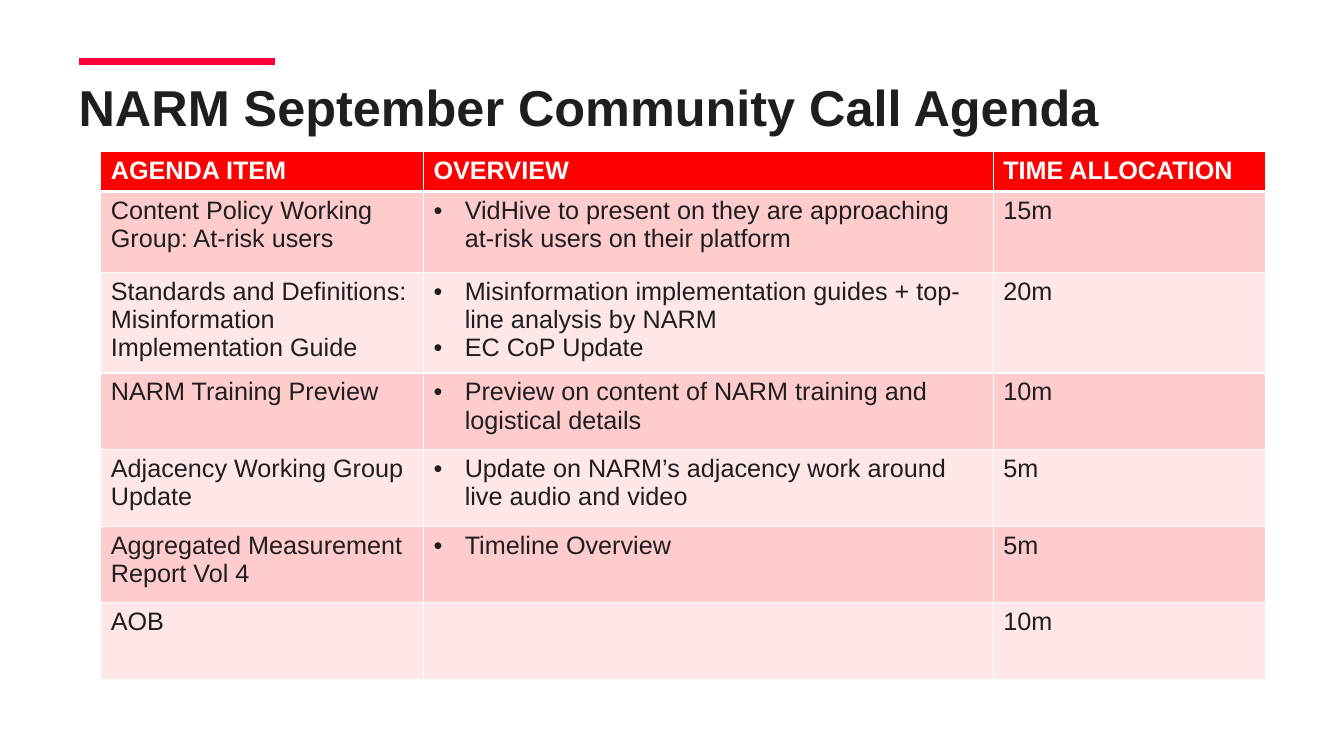
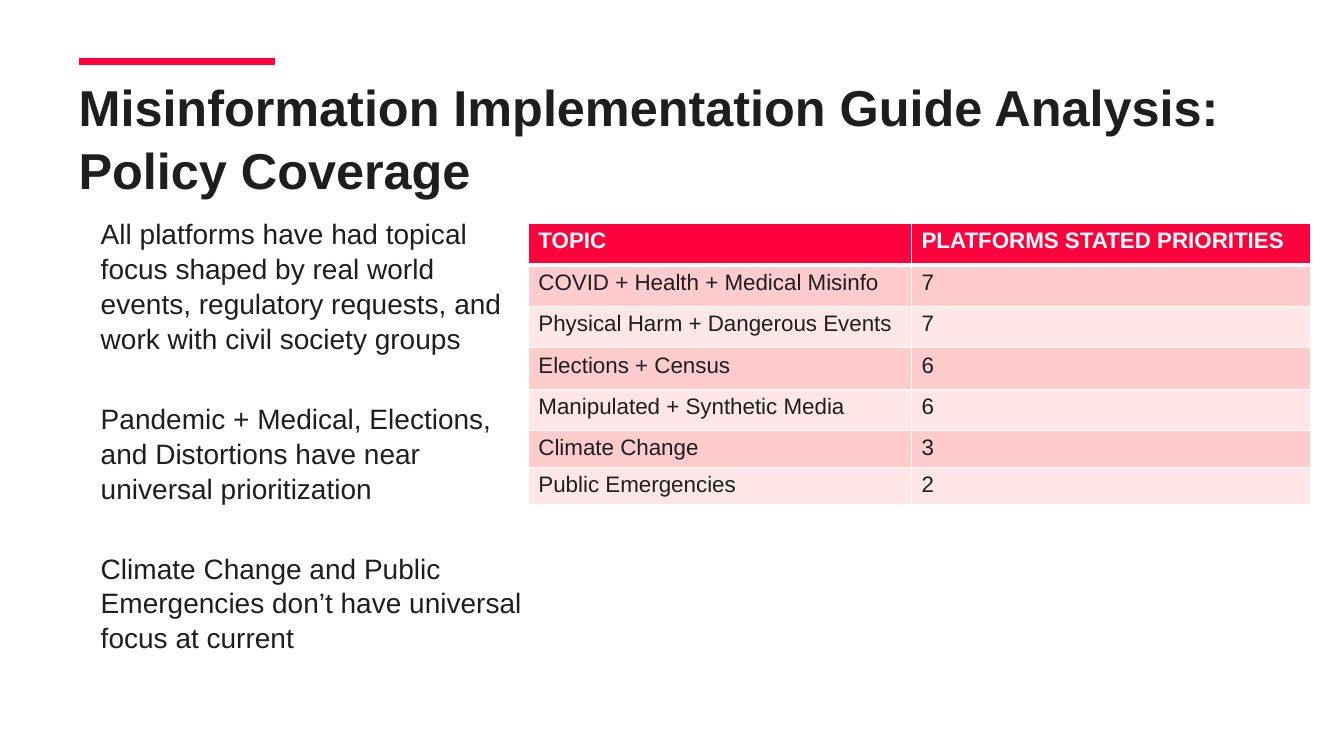
from dataclasses import dataclass

from pptx import Presentation
from pptx.dml.color import RGBColor
from pptx.enum.shapes import MSO_CONNECTOR
from pptx.oxml.ns import qn
from pptx.util import Inches, Length, Pt
from lxml.etree import SubElement

HUES = {"ink": "1E1E1E", "white": "FFFFFF", "brand": "FF003C", "red": "FF0000",
        "rose": "FFCCCE", "blush": "FFE7E8"}
WIDE, TALL = Inches(13.33), Inches(7.5)
LEFT, TOP = 5.85, 8.13
INSET = 7.5
BULLET = Inches(0.31)


@dataclass
class Grid:
    """A table: place, columns and rows in percent of the slide."""
    left: float
    top: float
    cols: list[float]
    rows: list[float]
    head: str
    size: int
    cells: list[tuple]


@dataclass
class Page:
    """One slide: its title, its table and any side notes."""
    title: str
    grid: Grid
    notes: tuple[str, ...] = ()


PAGES = [
    Page("NARM September Community Call Agenda", Grid(
        INSET, 20, [24.01, 42.39, 20.26], [4.93, 10.67, 12.67] + [10.13] * 4, "red", 18, [
            ("AGENDA ITEM", "OVERVIEW", "TIME ALLOCATION"),
            ("Content Policy Working Group: At-risk users",
             ["VidHive to present on they are approaching at-risk users on their platform"], "15m"),
            ("Standards and Definitions: Misinformation Implementation Guide",
             ["Misinformation implementation guides + top-line analysis by NARM",
              "EC CoP Update"], "20m"),
            ("NARM Training Preview",
             ["Preview on content of NARM training and logistical details"], "10m"),
            ("Adjacency Working Group Update",
             ["Update on NARM’s adjacency work around live audio and video"], "5m"),
            ("Aggregated Measurement Report Vol 4", ["Timeline Overview"], "5m"),
            ("AOB", "", "10m"),
        ])),
    Page("Misinformation Implementation Guide Analysis: Policy Coverage", Grid(
        39.31, 29.6, [28.51, 29.71], [5.47] * 5 + [4.67] * 2, "brand", 16, [
            ("TOPIC", "PLATFORMS STATED PRIORITIES"),
            ("COVID + Health + Medical Misinfo", "7"),
            ("Physical Harm + Dangerous Events", "7"),
            ("Elections + Census", "6"),
            ("Manipulated + Synthetic Media", "6"),
            ("Climate Change", "3"),
            ("Public Emergencies", "2"),
        ]), (
        "All platforms have had topical focus shaped by real world events, "
        "regulatory requests, and work with civil society groups",
        "Pandemic + Medical, Elections, and Distortions have near universal prioritization",
        "Climate Change and Public Emergencies don’t have universal focus at current",
    )),
]


def wide(part: float) -> Length:
    """Turn a percentage of the slide's width into a length."""
    return Length(round(WIDE * part / 100))


def tall(part: float) -> Length:
    """Turn a percentage of the slide's height into a length."""
    return Length(round(TALL * part / 100))


def tint(name: str) -> RGBColor:
    """Look up a named colour."""
    return RGBColor.from_string(HUES[name])


def style(para, size: float, hue: str = "ink", bold: bool = False) -> None:
    """Apply the font format to a paragraph."""
    for key, value in {"name": "Arial", "size": Pt(size), "bold": bold}.items():
        setattr(para.font, key, value)
    para.font.color.rgb = tint(hue)


def write(slide, box: tuple, texts: tuple[str, ...], size: float,
          bold: bool = False, gap: float = 0, inset: float = 0) -> None:
    """Add a text box with one paragraph per text."""
    left, top, width, height = box
    frame = slide.shapes.add_textbox(wide(left), tall(top), wide(width), tall(height)).text_frame
    form = {"word_wrap": True, "margin_left": 0, "margin_top": Inches(inset),
            "margin_right": 0, "margin_bottom": 0}
    for key, value in form.items():
        setattr(frame, key, value)
    for spot, text in enumerate(texts):
        para = frame.add_paragraph() if spot else frame.paragraphs[0]
        para.text = text
        para.line_spacing = 1.04
        if spot:
            para.space_before = Pt(gap)
        style(para, size, bold=bold)


def rule(slide) -> None:
    """Draw the accent line above the title."""
    line = slide.shapes.add_connector(
        MSO_CONNECTOR.STRAIGHT, wide(LEFT), tall(TOP), wide(20.48), tall(TOP))
    line.line.color.rgb = tint("brand")
    line.line.width = Pt(5)
    SubElement(line._element.spPr, qn("a:effectLst"))


def edge(cell, row: int) -> None:
    """Draw white cell borders, thick below the header."""
    props = cell._tc.get_or_add_tcPr()
    thick = {0: "B", 1: "T"}.get(row)
    for side in "LRTB":
        width = Pt(3 if side == thick else 1)
        line = SubElement(props, qn(f"a:ln{side}"), w=str(width))
        fill = SubElement(line, qn("a:solidFill"))
        SubElement(fill, qn("a:srgbClr"), val=HUES["white"])


def dot(para) -> None:
    """Give a paragraph a hanging bullet."""
    props = para._p.get_or_add_pPr()
    props.set("marL", str(BULLET))
    props.set("indent", str(-BULLET))
    SubElement(props, qn("a:buFont"), typeface="Arial")
    SubElement(props, qn("a:buChar"), char="•")


def fill(cell, row: int, text: str | list[str], grid: Grid) -> None:
    """Fill one table cell, with bullets for a list."""
    edge(cell, row)
    cell.fill.solid()
    cell.fill.fore_color.rgb = tint(grid.head if row == 0 else ("blush", "rose")[row % 2])
    items = text if isinstance(text, list) else [text]
    cell.text = "\n".join(items)
    for para in cell.text_frame.paragraphs:
        if items is text:
            dot(para)
        style(para, grid.size, "ink" if row else "white", row == 0)


def chart(slide, grid: Grid) -> None:
    """Add a table from its grid."""
    table = slide.shapes.add_table(
        len(grid.rows), len(grid.cols), wide(grid.left), tall(grid.top),
        wide(sum(grid.cols)), tall(sum(grid.rows))).table
    table.horz_banding = False
    for col, part in zip(table.columns, grid.cols):
        col.width = wide(part)
    for row, part in zip(table.rows, grid.rows):
        row.height = tall(part)
    for row, texts in enumerate(grid.cells):
        for col, text in enumerate(texts):
            fill(table.cell(row, col), row, text, grid)


def main() -> None:
    """Build and save the slides."""
    deck = Presentation()
    deck.slide_width, deck.slide_height = WIDE, TALL
    for page in PAGES:
        slide = deck.slides.add_slide(deck.slide_layouts[6])
        rule(slide)
        write(slide, (LEFT, TOP, 86.65, 20.27), (page.title,), 36, bold=True, inset=0.12)
        if page.notes:
            write(slide, (INSET, 28.53, 31.81, 61.47), page.notes, 20, gap=32)
        chart(slide, page.grid)
    deck.save("out.pptx")


if __name__ == "__main__":
    main()
